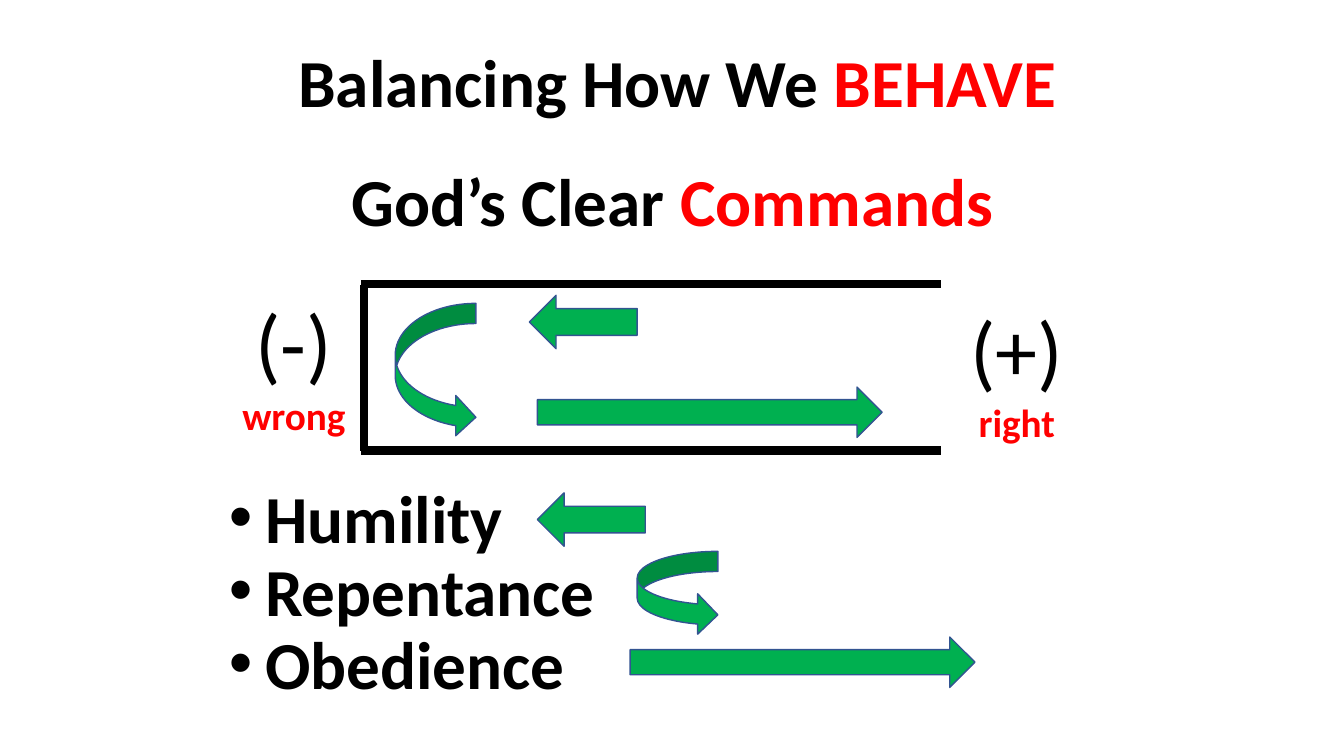
from pptx import Presentation
from pptx.dml.color import RGBColor
from pptx.enum.shapes import MSO_CONNECTOR, MSO_SHAPE
from pptx.enum.text import MSO_ANCHOR, MSO_AUTO_SIZE, PP_ALIGN
from pptx.util import Inches, Pt
from lxml import etree

BLACK = RGBColor(0x00, 0x00, 0x00)
RED = RGBColor(0xFF, 0x00, 0x00)
GREEN = RGBColor(0x00, 0xB0, 0x50)
BLUE = RGBColor(0x32, 0x54, 0x91)

deck = Presentation()
deck.slide_width, deck.slide_height = Inches(13.33), Inches(7.5)
slide = deck.slides.add_slide(deck.slide_layouts[1])
shapes = slide.shapes


def write(shape, lines, at, size=48, bold=True, align=PP_ALIGN.CENTER,
          space=0.8, after=0, inset=0):
    """Place a text shape; each line is a list of (text, colour[, size, bold])."""
    shape.left, shape.top, shape.width, shape.height = map(Inches, at)
    frame = shape.text_frame
    frame.word_wrap = True
    frame.auto_size = MSO_AUTO_SIZE.NONE
    frame.vertical_anchor = MSO_ANCHOR.TOP
    frame.margin_left = frame.margin_right = Inches(inset)
    frame.margin_top = frame.margin_bottom = Inches(inset)
    for i, line in enumerate(lines):
        para = frame.add_paragraph() if i else frame.paragraphs[0]
        para.alignment = align
        para.line_spacing = space
        para.space_before, para.space_after = Pt(0), Pt(after)
        for text, color, *style in line:
            run = para.add_run()
            run.text = text
            font = run.font
            font.name = "Calibri"
            font.color.rgb = color
            pts, font.bold = style or (size, bold)
            font.size = Pt(pts)


# Title and heading
write(shapes.title, [[("Balancing How We ", BLACK), ("BEHAVE", RED)]],
      (2.26, 0.55, 8.92, 0.76))
write(shapes.add_textbox(0, 0, 0, 0),
      [[("God’s Clear ", BLACK), ("Commands", RED)]], (2.17, 1.74, 9, 0.76))

# Bulleted list
body = slide.placeholders[1]
steps = ["Humility", "Repentance", "Obedience"]
write(body, [[(step, BLACK)] for step in steps], (2.27, 4.88, 3.9, 2.25),
      align=PP_ALIGN.LEFT, after=6)
for para in body.text_frame.paragraphs:
    props = para._p.get_or_add_pPr()
    props.set("marL", str(Inches(0.36)))
    props.set("indent", str(Inches(-0.36)))

# Open-ended box
for x1, y1, x2, y2 in [(3.58, 2.82, 9.33, 2.82), (3.58, 4.47, 9.33, 4.47),
                       (3.61, 2.83, 3.61, 4.47)]:
    edge = shapes.add_connector(MSO_CONNECTOR.STRAIGHT, Inches(x1), Inches(y1),
                                Inches(x2), Inches(y2))
    edge.line.color.rgb = BLACK
    edge.line.width = Pt(6)
    etree.SubElement(
        edge._element.spPr,
        "{http://schemas.openxmlformats.org/drawingml/2006/main}effectLst")

# Signs at both ends
for sign, word, x, y in [("(-)", "wrong", 2.25, 2.83), ("(+)", "right", 9.42, 2.9)]:
    write(shapes.add_textbox(0, 0, 0, 0),
          [[(sign, BLACK, 60, False)], [(word, RED, 28, True)]],
          (x, y, 1.33, 1.58), space=1, inset=0.05)

# Arrows: in the box, then beside the list
BACK, TURN, AHEAD = (MSO_SHAPE.LEFT_ARROW, MSO_SHAPE.CURVED_RIGHT_ARROW,
                     MSO_SHAPE.RIGHT_ARROW)
for kind, *at in [(TURN, 3.92, 3.01, 0.8, 1.33), (BACK, 5.25, 2.93, 1.07, 0.53),
                  (AHEAD, 5.33, 3.84, 3.42, 0.5), (BACK, 5.33, 4.89, 1.07, 0.53),
                  (TURN, 6.32, 5.47, 0.8, 0.83), (AHEAD, 6.25, 6.32, 3.42, 0.5)]:
    arrow = shapes.add_shape(kind, *map(Inches, at))
    arrow.shadow.inherit = False
    arrow.fill.solid()
    arrow.fill.fore_color.rgb = GREEN
    arrow.line.color.rgb = BLUE
    arrow.line.width = Pt(1)

deck.save("out.pptx")
